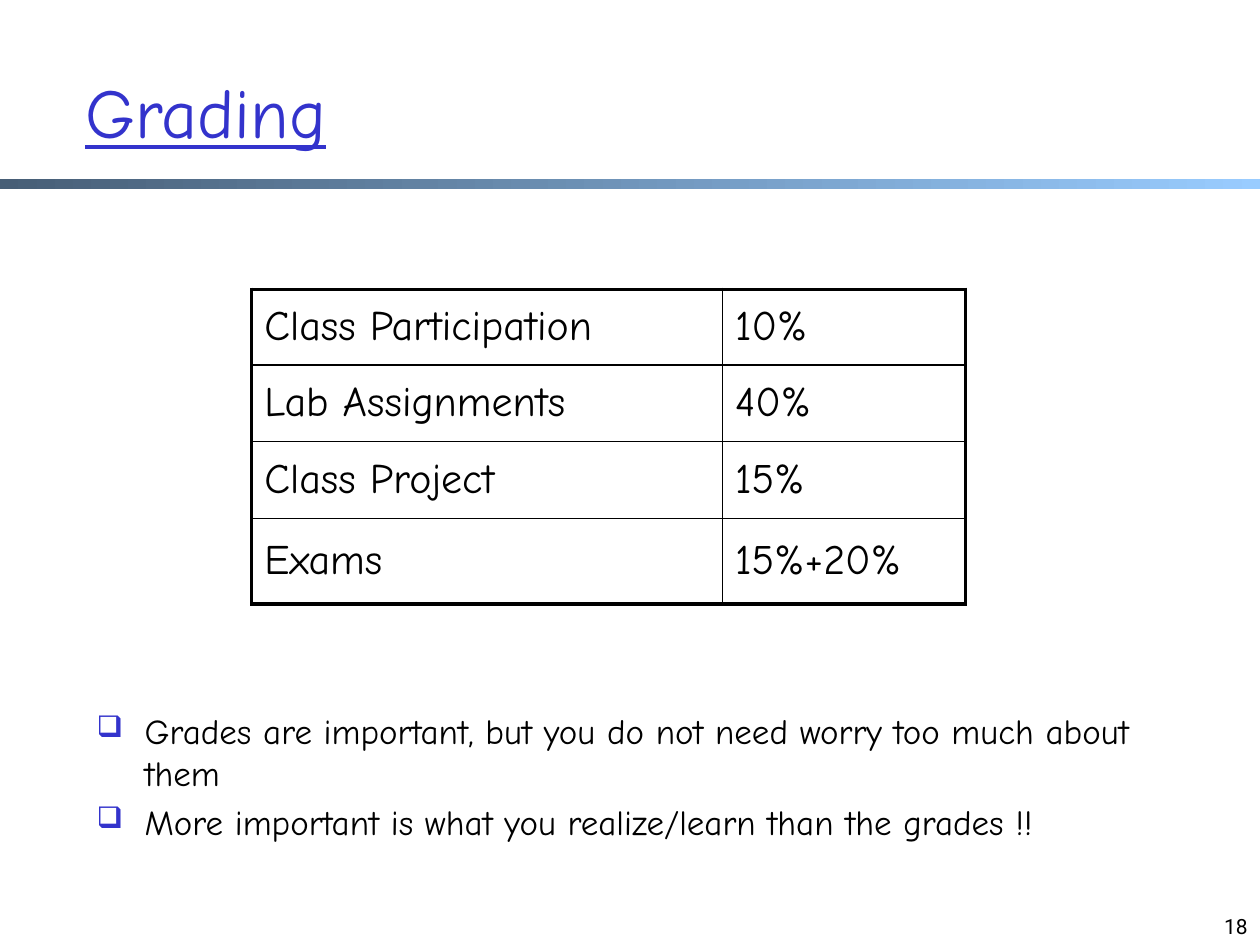
from dataclasses import dataclass

from lxml.etree import SubElement
from pptx import Presentation
from pptx.dml.color import RGBColor
from pptx.enum.text import MSO_ANCHOR, PP_ALIGN
from pptx.oxml.ns import qn
from pptx.slide import Slide
from pptx.table import _Cell
from pptx.text.text import TextFrame, _Paragraph
from pptx.util import Inches, Pt

BLACK = RGBColor(0x00, 0x00, 0x00)
BLUE = RGBColor(0x33, 0x33, 0xCC)
BAR_DARK = RGBColor(0x47, 0x5E, 0x76)
BAR_LIGHT = RGBColor(0x99, 0xCC, 0xFF)
HAND_FONT = "Comic Neue"
NUMBER_FONT = "Roboto"
SLIDE_WIDTH = 10.01
SPACE_BEFORE = 0.2  # share of the text size
HANGING_INDENT = Inches(0.38)
OUTER_BORDER = Pt(2.25)
INNER_BORDER = Pt(1)
COLUMN_WIDTHS = (3.74, 1.93)


@dataclass(frozen=True)
class GradeShare:
    work: str
    share: str
    height: float


GRADE_SHARES = (
    GradeShare("Class Participation", "10%", 0.6),
    GradeShare("Lab Assignments", "40%", 0.61),
    GradeShare("Class Project", "15%", 0.61),
    GradeShare("Exams", "15%+20%", 0.68),
)
REMARKS = (
    "Grades are important, but you do not need worry too much about them",
    "More important is what you realize/learn than the grades !!",
)


def add_text(paragraph: _Paragraph, text: str, size: float, color: RGBColor = BLACK,
             font: str = HAND_FONT, underline: bool = False) -> None:
    run = paragraph.add_run()
    run.text = text
    run.font.size = Pt(size)
    run.font.name = font
    run.font.color.rgb = color
    run.font.underline = underline


def add_text_area(slide: Slide, left: float, top: float, width: float, height: float,
                  anchor: MSO_ANCHOR) -> TextFrame:
    area = slide.shapes.add_textbox(Inches(left), Inches(top), Inches(width), Inches(height))
    area.text_frame.word_wrap = True
    area.text_frame.vertical_anchor = anchor
    return area.text_frame


def add_square_bullet(paragraph: _Paragraph) -> None:
    properties = paragraph._p.get_or_add_pPr()
    properties.set("marL", str(HANGING_INDENT))
    properties.set("indent", str(-HANGING_INDENT))
    bullet_color = SubElement(properties, qn("a:buClr"))
    SubElement(bullet_color, qn("a:srgbClr"), val=str(BLUE))
    SubElement(properties, qn("a:buSzPct"), val="85000")
    SubElement(properties, qn("a:buChar"), char="❑")


def set_borders(cell: _Cell, left: int, right: int, top: int, bottom: int) -> None:
    properties = cell._tc.get_or_add_tcPr()
    for side, width in zip("LRTB", (left, right, top, bottom)):
        border = SubElement(properties, qn(f"a:ln{side}"), w=str(width))
        fill = SubElement(border, qn("a:solidFill"))
        SubElement(fill, qn("a:srgbClr"), val=str(BLACK))


def add_divider(slide: Slide) -> None:
    divider = slide.shapes.add_shape(1, 0, Inches(1.42), Inches(SLIDE_WIDTH), Inches(0.08))
    divider.shadow.inherit = False
    divider.line.fill.background()
    divider.fill.gradient()
    divider.fill.gradient_angle = 0
    for stop, color in zip(divider.fill.gradient_stops, (BAR_DARK, BAR_LIGHT)):
        stop.color.rgb = color


def add_grade_table(slide: Slide) -> None:
    row_count, column_count = len(GRADE_SHARES), len(COLUMN_WIDTHS)
    table = slide.shapes.add_table(row_count, column_count, Inches(2), Inches(2.3),
                                   Inches(sum(COLUMN_WIDTHS)), Inches(2.5)).table
    table.first_row = table.horz_banding = False
    for column, width in zip(table.columns, COLUMN_WIDTHS):
        column.width = Inches(width)
    for row_index, grade in enumerate(GRADE_SHARES):
        table.rows[row_index].height = Inches(grade.height)
        for column_index, text in enumerate((grade.work, grade.share)):
            cell = table.cell(row_index, column_index)
            on_edge = (column_index == 0, column_index == column_count - 1,
                       row_index == 0, row_index == row_count - 1)
            set_borders(cell, *(OUTER_BORDER if edge else INNER_BORDER for edge in on_edge))
            cell.fill.background()
            cell.vertical_anchor = MSO_ANCHOR.MIDDLE
            paragraph = cell.text_frame.paragraphs[0]
            paragraph.space_before = Pt(24 * SPACE_BEFORE)
            add_text(paragraph, text, 24)


def add_remarks(slide: Slide) -> None:
    remarks = add_text_area(slide, 0.67, 5.59, 8.42, 1.67, MSO_ANCHOR.TOP)
    for index, remark in enumerate(REMARKS):
        paragraph = remarks.add_paragraph() if index else remarks.paragraphs[0]
        paragraph.space_before = Pt(20 * SPACE_BEFORE)
        add_square_bullet(paragraph)
        add_text(paragraph, remark, 20)


def main() -> None:
    presentation = Presentation()
    presentation.slide_width = Inches(SLIDE_WIDTH)
    presentation.slide_height = Inches(7.51)
    slide = presentation.slides.add_slide(presentation.slide_layouts[6])

    add_divider(slide)
    page_number = add_text_area(slide, 7.68, 7.01, 2.33, 0.5, MSO_ANCHOR.BOTTOM).paragraphs[0]
    page_number.alignment = PP_ALIGN.RIGHT
    add_text(page_number, "18", 12, font=NUMBER_FONT)
    title = add_text_area(slide, 0.58, 0.25, 8.51, 1.25, MSO_ANCHOR.MIDDLE).paragraphs[0]
    add_text(title, "Grading", 40, BLUE, underline=True)
    add_grade_table(slide)
    add_remarks(slide)

    presentation.save("out.pptx")


if __name__ == "__main__":
    main()
